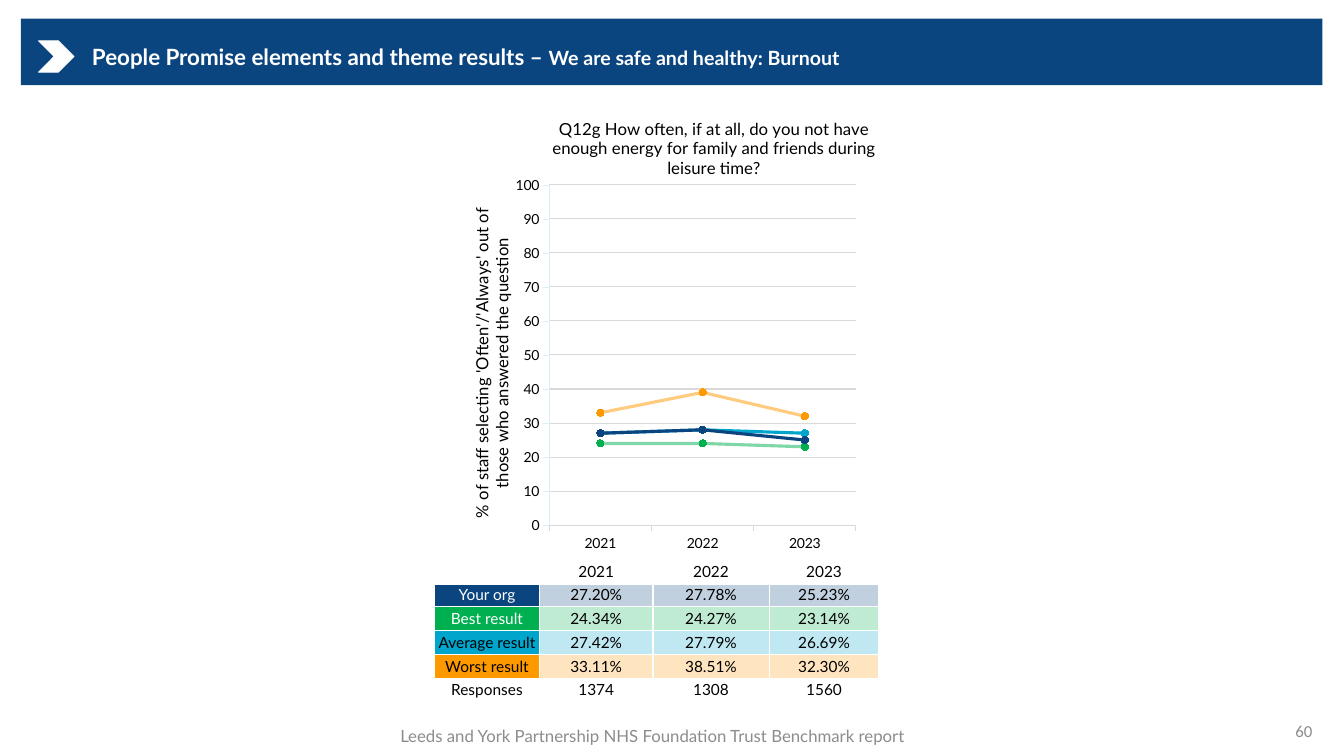
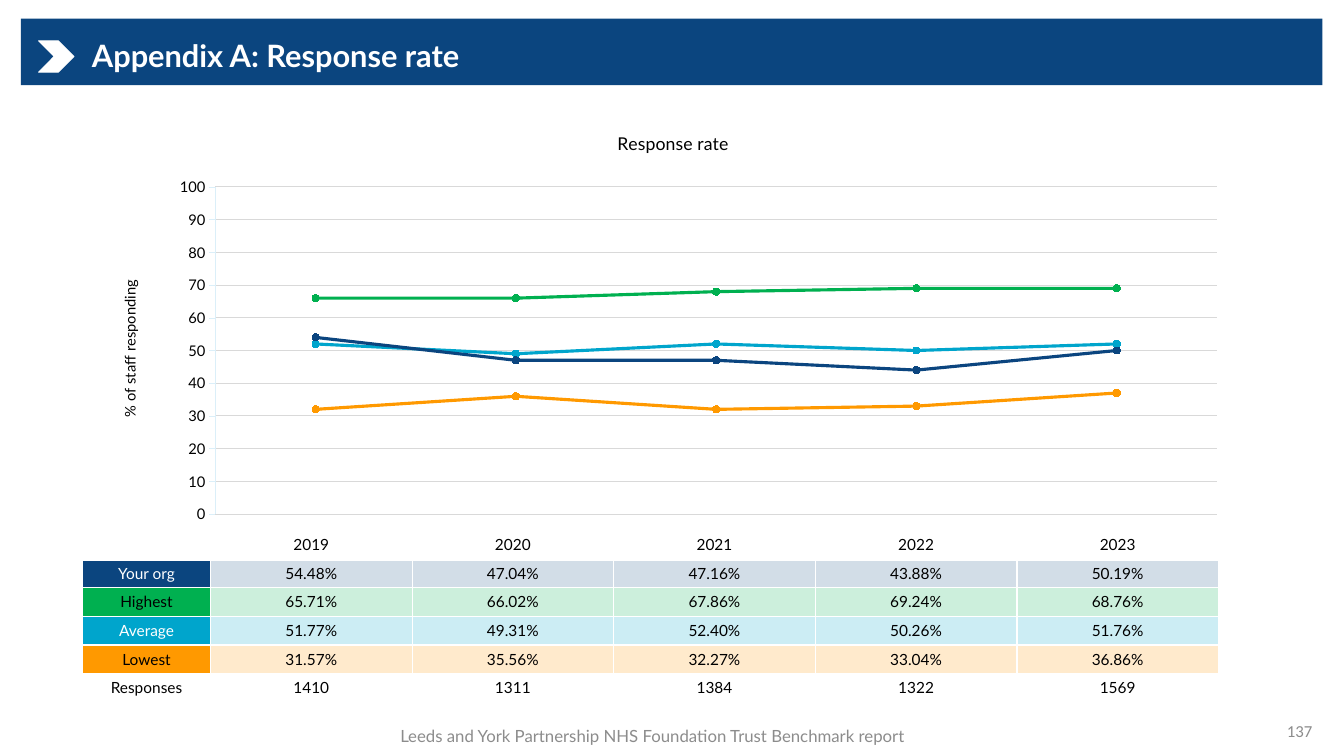
from dataclasses import dataclass

from lxml import etree
from pptx import Presentation
from pptx.chart import data as chart_data
from pptx.dml.color import RGBColor
from pptx.enum import chart as chart_enum, shapes, text
from pptx.oxml import ns
from pptx.util import Pt


@dataclass(frozen=True)
class Theme:
    font: str = "Lato"
    number_font: str = "Calibri"
    navy: str = "0B457F"
    green: str = "00B050"
    cyan: str = "00A5CC"
    orange: str = "FF9900"
    white: str = "FFFFFF"
    black: str = "000000"
    muted: str = "8C8C8C"
    grid: str = "D9D9D9"
    axis: str = "DBEFF9"
    heading: float = 22
    long_heading: float = 16
    long_heading_detail: float = 14
    footer: float = 12
    table: float = 11


THEME = Theme()
FOOTER = "Leeds and York Partnership NHS Foundation Trust Benchmark report"


@dataclass(frozen=True)
class Box:
    left: float
    top: float
    width: float
    height: float

    def inner(self, left, top, width, height):
        return Box(self.left + left, self.top + top, width, height)

    def lengths(self):
        return [Pt(value) for value in (self.left, self.top, self.width, self.height)]


@dataclass(frozen=True)
class Row:
    label: str
    values: tuple
    color: str
    label_color: str
    tint: int
    line_opacity: int = 100


@dataclass(frozen=True)
class ChartStyle:
    title: str
    title_size: float
    title_at: tuple
    axis_title: str
    axis_title_size: float
    axis_title_at: tuple
    size: float
    plot: tuple
    show_years: bool


def rgb(color):
    return RGBColor.from_string(color)


def style_font(font, size, color, name=THEME.font, bold=False):
    font.name = name
    font.size = Pt(size)
    font.color.rgb = rgb(color)
    font.bold = bold


def style_line(line, color, width):
    line.color.rgb = rgb(color)
    line.width = Pt(width)


def set_opacity(element, percent):
    color = element.find(".//" + ns.qn("a:srgbClr"))
    etree.SubElement(color, ns.qn("a:alpha"), val=str(percent * 1000))


def set_layout(element, index, inner=False, **fractions):
    for old in element.findall(ns.qn("c:layout")):
        element.remove(old)
    layout = etree.Element(ns.qn("c:layout"))
    manual = etree.SubElement(layout, ns.qn("c:manualLayout"))
    if inner:
        etree.SubElement(manual, ns.qn("c:layoutTarget"), val="inner")
    for key in ("x", "y"):
        etree.SubElement(manual, ns.qn(f"c:{key}Mode"), val="edge")
    for key, value in fractions.items():
        etree.SubElement(manual, ns.qn(f"c:{key}"), val=str(value))
    element.insert(index, layout)


def add_banner(slide, layout, box):
    band = slide.shapes.add_shape(shapes.MSO_SHAPE.RECTANGLE, *box.lengths())
    band.line.fill.background()
    chevron = slide.shapes.add_shape(
        shapes.MSO_SHAPE.CHEVRON, *box.inner(12.6, 15.8, 25.2, 22.3).lengths())
    style_line(chevron.line, THEME.white, 0.75)
    for index, (shape, color) in enumerate(((band, THEME.navy), (chevron, THEME.white))):
        shape.shadow.inherit = False
        shape.fill.solid()
        shape.fill.fore_color.rgb = rgb(color)
        shape._element.nvSpPr.cNvPr.id = 20 + index
        layout.shapes._spTree.insert(2 + index, shape._element)


def set_title(slide, box, parts):
    title = slide.shapes.title
    title.left, title.top, title.width, title.height = box.lengths()
    frame = title.text_frame
    frame.word_wrap = True
    frame.auto_size = text.MSO_AUTO_SIZE.NONE
    frame.vertical_anchor = text.MSO_ANCHOR.MIDDLE
    paragraph = frame.paragraphs[0]
    paragraph.alignment = text.PP_ALIGN.LEFT
    paragraph.line_spacing = 0.9
    for words, size in parts:
        run = paragraph.add_run()
        run.text = words
        style_font(run.font, size, THEME.white, bold=True)


def add_label(slide, box, words, alignment, font_name):
    frame = slide.shapes.add_textbox(*box.lengths()).text_frame
    frame.word_wrap = True
    frame.vertical_anchor = text.MSO_ANCHOR.MIDDLE
    paragraph = frame.paragraphs[0]
    paragraph.text = words
    paragraph.alignment = alignment
    style_font(paragraph.font, THEME.footer, THEME.muted, font_name)


def add_footer(slide, box, number):
    add_label(slide, box.inner(0, 4, 507.6, 28), FOOTER,
              text.PP_ALIGN.CENTER, THEME.font)
    add_label(slide, box.inner(box.width - 216, 0, 216, 28.8), number,
              text.PP_ALIGN.RIGHT, THEME.number_font)


def set_chart_title(title, words, size, at):
    frame = title.text_frame
    frame.text = words
    style_font(frame.paragraphs[0].font, size, THEME.black)
    if at:
        set_layout(title._element, 1, x=at[0], y=at[1])
    return frame


def style_axis(axis, size, color, width):
    axis.major_tick_mark = chart_enum.XL_TICK_MARK.OUTSIDE
    axis.minor_tick_mark = chart_enum.XL_TICK_MARK.NONE
    style_font(axis.tick_labels.font, size, THEME.black)
    style_line(axis.format.line, color, width)


def add_trend_chart(slide, box, years, rows, style):
    values = chart_data.CategoryChartData(number_format="0")
    values.categories = years
    organisation, best, average, worst = rows
    drawing_order = (average, best, worst, organisation)
    for row in drawing_order:
        values.add_series(row.label, [round(value) for value in row.values])
    chart = slide.shapes.add_chart(
        chart_enum.XL_CHART_TYPE.LINE_MARKERS, *box.lengths(), values).chart
    chart.has_legend = False
    style_font(chart.font, style.size, THEME.black)
    chart.has_title = True
    set_chart_title(chart.chart_title, style.title, style.title_size, style.title_at)

    axis = chart.value_axis
    axis.minimum_scale, axis.maximum_scale, axis.major_unit = 0, 100, 10
    axis.tick_labels.number_format = "0"
    axis.tick_labels.number_format_is_linked = False
    style_axis(axis, style.size, THEME.axis, 0.25)
    axis.has_major_gridlines = True
    style_line(axis.major_gridlines.format.line, THEME.grid, 0.75)
    frame = set_chart_title(axis.axis_title, style.axis_title,
                            style.axis_title_size, style.axis_title_at)
    frame._txBody.bodyPr.set("rot", "-5400000")
    frame._txBody.bodyPr.set("vert", "horz")
    style_axis(chart.category_axis, style.size, THEME.grid, 0.75)
    chart.category_axis.visible = style.show_years

    plot = chart.plots[0]
    plot.vary_by_categories = False
    for series, row in zip(plot.series, drawing_order):
        series.smooth = False
        style_line(series.format.line, row.color, 2.25)
        if row.line_opacity < 100:
            set_opacity(series._element, row.line_opacity)
        series.marker.style = chart_enum.XL_MARKER_STYLE.CIRCLE
        series.marker.size = 5
        series.marker.format.fill.solid()
        series.marker.format.fill.fore_color.rgb = rgb(row.color)
        series.marker.format.line.color.rgb = rgb(row.color)
    x, y, w, h = style.plot
    set_layout(chart._chartSpace.chart.plotArea, 0, inner=True, x=x, y=y, w=w, h=h)


def set_borders(cell, bottom):
    properties = cell._tc.get_or_add_tcPr()
    for index, (side, width) in enumerate((("L", 1), ("R", 1), ("T", 1), ("B", bottom))):
        line = etree.Element(ns.qn(f"a:ln{side}"), w=str(Pt(width)))
        fill = etree.SubElement(line, ns.qn("a:solidFill"))
        etree.SubElement(fill, ns.qn("a:srgbClr"), val=THEME.white)
        properties.insert(index, line)


def fill_cell(cell, words, color=THEME.black, fill=None, opacity=100, bottom=1):
    cell.margin_left = cell.margin_right = cell.margin_top = cell.margin_bottom = 0
    cell.vertical_anchor = text.MSO_ANCHOR.MIDDLE
    paragraph = cell.text_frame.paragraphs[0]
    paragraph.text = words
    paragraph.alignment = text.PP_ALIGN.CENTER
    style_font(paragraph.font, THEME.table, color)
    if fill:
        cell.fill.solid()
        cell.fill.fore_color.rgb = rgb(fill)
        if opacity < 100:
            set_opacity(cell._tc.tcPr, opacity)
    else:
        cell.fill.background()
    set_borders(cell, bottom)


def add_results_table(slide, box, widths, years, rows, responses):
    count = len(rows) + 2
    table = slide.shapes.add_table(count, len(widths), *box.lengths()).table
    table.first_row = table.horz_banding = False
    for column, width in zip(table.columns, widths):
        column.width = Pt(width)
    for table_row in table.rows:
        table_row.height = Pt(box.height / count)
    for column, year in enumerate(("", *years)):
        fill_cell(table.cell(0, column), year, bottom=3)
    for index, row in enumerate(rows, 1):
        fill_cell(table.cell(index, 0), row.label, row.label_color, row.color)
        for column, value in enumerate(row.values, 1):
            fill_cell(table.cell(index, column), f"{value:.2f}%",
                      fill=row.color, opacity=row.tint)
    for column, words in enumerate(("Responses", *responses)):
        fill_cell(table.cell(count - 1, column), words)


def add_results_slide(presentation, layout, title_parts, number):
    slide = presentation.slides.add_slide(layout)
    set_title(slide, Box(58.5, 25.6, 692, 31.7), title_parts)
    add_footer(slide, Box(212.4, 507.8, 732.2, 32), number)
    return slide


def add_burnout_slide(presentation, layout):
    slide = add_results_slide(presentation, layout, (
        ("People Promise elements and theme results – ", THEME.long_heading),
        ("We are safe and healthy: Burnout", THEME.long_heading_detail)), "60")
    years = ("2021", "2022", "2023")
    rows = (
        Row("Your org", (27.20, 27.78, 25.23), THEME.navy, THEME.white, 25),
        Row("Best result", (24.34, 24.27, 23.14), THEME.green, THEME.white, 25, 50),
        Row("Average result", (27.42, 27.79, 26.69), THEME.cyan, THEME.black, 25),
        Row("Worst result", (33.11, 38.51, 32.30), THEME.orange, THEME.black, 25, 50),
    )
    style = ChartStyle(
        "Q12g How often, if at all, do you not have enough energy for family "
        "and friends during leisure time?", 12, (0.2, 0.03),
        "% of staff selecting 'Often'/'Always' out of those who answered the question",
        12, (0, 0.24), 10, (0.2, 0.19, 0.74, 0.76), True)
    add_results_table(slide, Box(310.3, 399.6, 317.6, 101.8), (75.1, 81, 83, 78.5),
                      years, rows, ("1374", "1308", "1560"))
    add_trend_chart(slide, Box(333.2, 71.4, 296, 322.6), years, rows, style)
    return slide


def add_response_slide(presentation, layout):
    slide = add_results_slide(
        presentation, layout, (("Appendix A: Response rate", THEME.heading),), "137")
    years = ("2019", "2020", "2021", "2022", "2023")
    rows = (
        Row("Your org", (54.48, 47.04, 47.16, 43.88, 50.19), THEME.navy, THEME.white, 18),
        Row("Highest", (65.71, 66.02, 67.86, 69.24, 68.76), THEME.green, THEME.black, 20),
        Row("Average", (51.77, 49.31, 52.40, 50.26, 51.76), THEME.cyan, THEME.white, 20),
        Row("Lowest", (31.57, 35.56, 32.27, 33.04, 36.86), THEME.orange, THEME.black, 20),
    )
    style = ChartStyle("Response rate", 12.6, None, "% of staff responding",
                       10.5, (0.05, 0.38), 10.5, (0.13, 0.17, 0.81, 0.76), False)
    add_trend_chart(slide, Box(39.1, 81.3, 883.2, 307.5), years, rows, style)
    add_results_table(slide, Box(59, 378.7, 811.4, 123), (91.4, *[144] * 5),
                      years, rows, ("1410", "1311", "1384", "1322", "1569"))


def main():
    presentation = Presentation()
    presentation.slide_width, presentation.slide_height = Pt(960), Pt(540)
    layout = presentation.slide_layouts[5]
    burnout = add_burnout_slide(presentation, layout)
    add_banner(burnout, layout, Box(15, 13.4, 929.7, 47.4))
    add_response_slide(presentation, layout)
    presentation.save("out.pptx")


if __name__ == "__main__":
    main()
